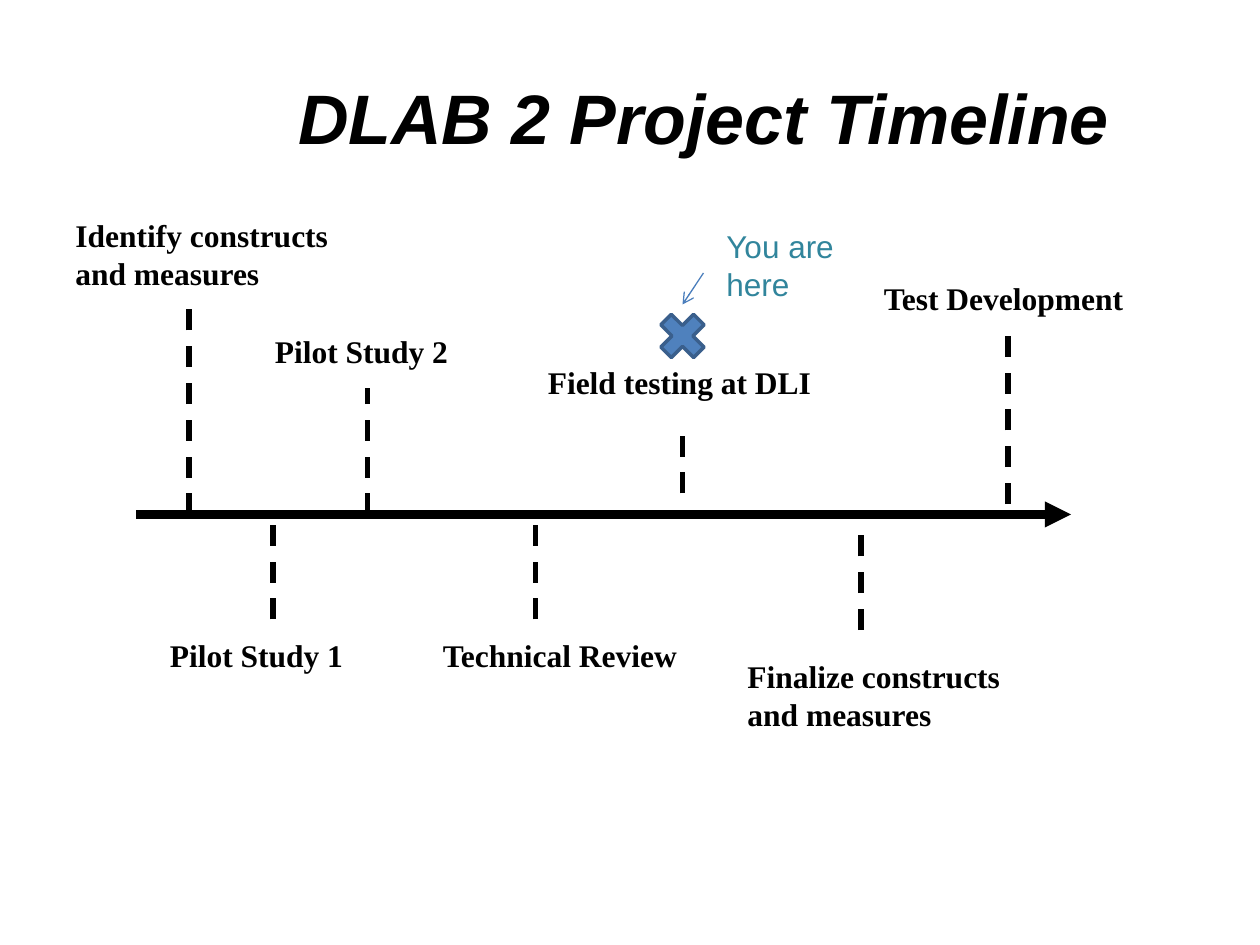
import pptx
import pptx.dml.color
import pptx.enum.dml
import pptx.enum.shapes
import pptx.enum.text
import pptx.oxml.ns
import pptx.oxml.xmlchemy
import pptx.util

Pt = pptx.util.Pt
COLORS = {
    "ink": "000000",
    "arrow": "4B7EBC",
    "fill": "4F81BD",
    "edge": "3A5F8C",
    "note": "31859C",
}
AXIS = 294

# label, left, top, width, height
LABELS = [
    ("Identify constructs and measures", 36, 120, 174, 51),
    ("Pilot Study 1", 90, 360, 150, 29),
    ("Pilot Study 2", 150, 186, 150, 29),
    ("Technical Review", 246, 360, 168, 29),
    ("Test Development", 498, 156, 186, 29),
    ("Field testing at DLI", 306, 204, 174, 29),
    ("Finalize constructs and measures", 420, 372, 168, 51),
]

# x, start, end
TICKS = [
    (108, AXIS, 168),
    (156, 354, AXIS),
    (210, AXIS, 222),
    (306, 354, AXIS),
    (576, 288, 186),
    (390, 282, 240),
    (492, 360, 300),
]


def rgb(name):
    return pptx.dml.color.RGBColor.from_string(COLORS[name])


def add_text(slide, text, left, top, width, height, size=18,
             font="Times New Roman", color="ink", bold=True, italic=False,
             align="LEFT", anchor="TOP", grow=True):
    box = slide.shapes.add_textbox(Pt(left), Pt(top), Pt(width), Pt(height))
    frame = box.text_frame
    frame.word_wrap = True
    frame.vertical_anchor = getattr(pptx.enum.text.MSO_ANCHOR, anchor)
    if grow:
        frame.auto_size = pptx.enum.text.MSO_AUTO_SIZE.SHAPE_TO_FIT_TEXT
    para = frame.paragraphs[0]
    para.alignment = getattr(pptx.enum.text.PP_ALIGN, align)
    run = para.add_run()
    run.text = text
    run.font.name = font
    run.font.size = Pt(size)
    run.font.bold = bold
    run.font.italic = italic
    run.font.color.rgb = rgb(color)


def add_line(slide, start, end, width, color="ink", dash=False, head=None):
    """Draw a straight line; head names the arrowhead at its end."""
    line = slide.shapes.add_connector(
        pptx.enum.shapes.MSO_CONNECTOR.STRAIGHT,
        Pt(start[0]), Pt(start[1]), Pt(end[0]), Pt(end[1]))
    line.line.width = Pt(width)
    line.line.color.rgb = rgb(color)
    if dash:
        line.line.dash_style = pptx.enum.dml.MSO_LINE.DASH
    props = line._element.spPr
    make = pptx.oxml.xmlchemy.OxmlElement
    if head:
        tail = make("a:tailEnd")
        tail.set("type", head)
        props.find(pptx.oxml.ns.qn("a:ln")).append(tail)
    props.append(make("a:effectLst"))


def add_cross(slide, left, top, size):
    cross = slide.shapes.add_shape(
        pptx.enum.shapes.MSO_SHAPE.MATH_MULTIPLY,
        Pt(left), Pt(top), Pt(size), Pt(size))
    cross.shadow.inherit = False
    cross.fill.solid()
    cross.fill.fore_color.rgb = rgb("fill")
    cross.line.color.rgb = rgb("edge")
    cross.line.width = Pt(2)


def main():
    deck = pptx.Presentation()
    deck.slide_width, deck.slide_height = Pt(720), Pt(540)
    slide = deck.slides.add_slide(deck.slide_layouts[6])

    add_text(slide, "DLAB 2 Project Timeline", 108, 21.6, 588, 90, size=40,
             font="Arial", italic=True, align="CENTER", anchor="MIDDLE",
             grow=False)
    add_line(slide, (78, AXIS), (612, AXIS), 5, head="triangle")
    for x, start, end in TICKS:
        add_line(slide, (x, start), (x, end), 3, dash=True)
    for label in LABELS:
        add_text(slide, *label)

    add_line(slide, (402, 156), (390, 174), 0.75, color="arrow", head="arrow")
    add_cross(slide, 372, 174, 36)
    add_text(slide, "You are here", 408, 126, 84, 51, font="Arial",
             color="note", bold=False)
    deck.save("out.pptx")


if __name__ == "__main__":
    main()
